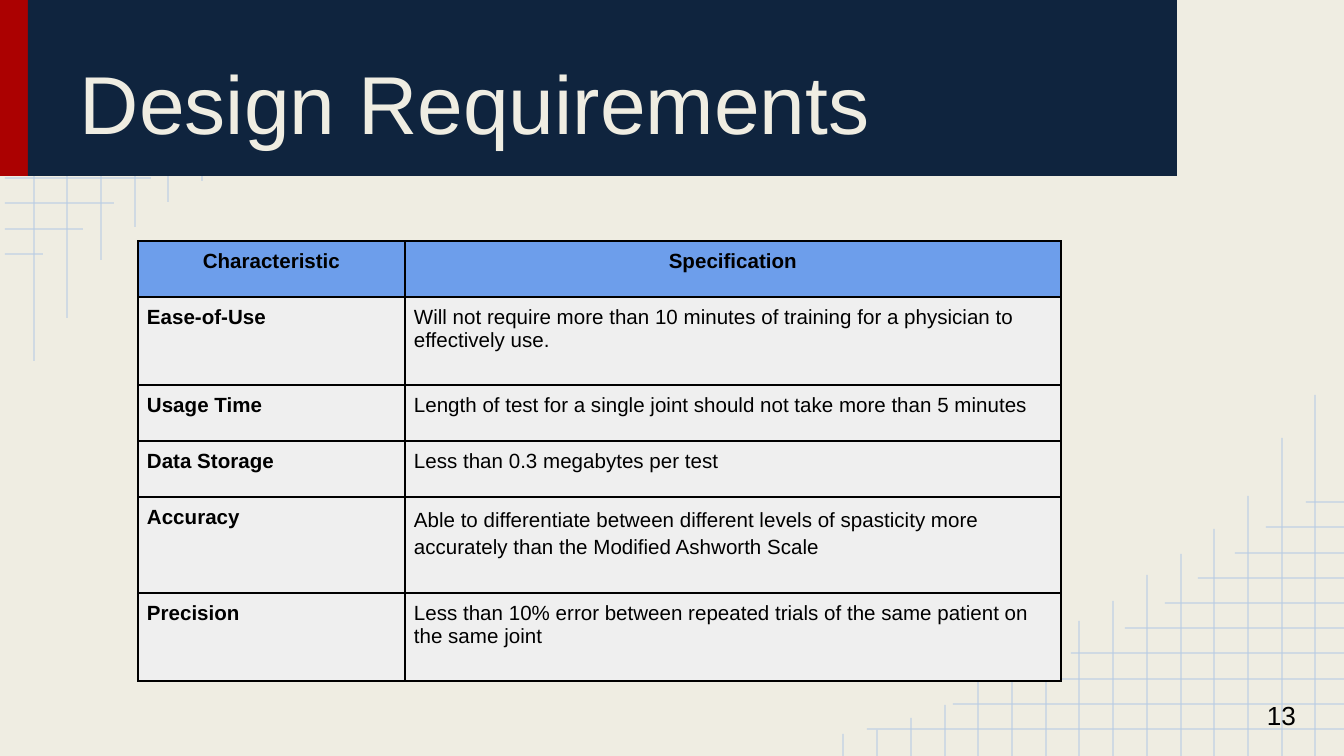
import lxml.etree
import pptx
import pptx.dml.color
import pptx.enum.shapes
import pptx.enum.text
import pptx.oxml.ns
import pptx.util

RGBColor = pptx.dml.color.RGBColor
Align = pptx.enum.text.PP_ALIGN
Anchor = pptx.enum.text.MSO_ANCHOR
qn = pptx.oxml.ns.qn

CREAM = RGBColor(0xEF, 0xED, 0xE2)
NAVY = RGBColor(0x0F, 0x24, 0x3E)
RED = RGBColor(0xAB, 0x01, 0x01)
GRID_BLUE = RGBColor(0xB7, 0xCC, 0xE4)
HEAD_BLUE = RGBColor(0x6D, 0x9E, 0xEB)
CELL_GREY = RGBColor(0xEF, 0xEF, 0xEF)
BLACK = RGBColor(0, 0, 0)

FONT = "Arial"
WIDTH, HEIGHT = 1344, 756
SCALE = 9144000 / WIDTH

GRID_INSET = 5
GRID_ROW_REACH = [482, 396, 324, 278, 224, 184, 151, 114, 83, 43]
GRID_COLUMN_REACH = [361, 318, 260, 227, 202, 181, 155, 135, 113, 97, 75, 51, 38, 26, 22]

COLUMN_WIDTHS = [267, 656]
ROW_HEIGHTS = [56, 88, 56, 56, 96, 88]
REQUIREMENTS = [
    ("Characteristic", "Specification"),
    ("Ease-of-Use", "Will not require more than 10 minutes of training for a physician to effectively use."),
    ("Usage Time", "Length of test for a single joint should not take more than 5 minutes"),
    ("Data Storage", "Less than 0.3 megabytes per test"),
    ("Accuracy", "Able to differentiate between different levels of spasticity more accurately "
                 "than the Modified Ashworth Scale"),
    ("Precision", "Less than 10% error between repeated trials of the same patient on the same joint"),
]


def px(length):
    """Turn px into EMU."""
    return pptx.util.Emu(round(length * SCALE))


def style_paragraph(para, size, color, bold=False, align=Align.LEFT):
    """Set the font and alignment of a paragraph."""
    para.alignment = align
    para.font.name = FONT
    para.font.size = pptx.util.Pt(size)
    para.font.color.rgb = color
    para.font.bold = bold


def add_text(page, box, text, size, color, anchor, align=Align.LEFT):
    """Place one line of text in a box."""
    frame = page.shapes.add_textbox(*map(px, box)).text_frame
    frame.word_wrap = True
    frame.vertical_anchor = anchor
    frame.margin_left = frame.margin_right = frame.margin_top = frame.margin_bottom = px(13)
    frame.text = text
    style_paragraph(frame.paragraphs[0], size, color, align=align)


def add_grid_line(page, start, end):
    """Draw one translucent grid line."""
    line = page.shapes.add_connector(
        pptx.enum.shapes.MSO_CONNECTOR.STRAIGHT, *map(px, start + end))
    line.line.width = pptx.util.Pt(1)
    line.line.color.rgb = GRID_BLUE
    properties = line._element.spPr
    color = properties.find(".//" + qn("a:srgbClr"))
    lxml.etree.SubElement(color, qn("a:alpha"), val="54000")
    lxml.etree.SubElement(properties, qn("a:effectLst"))


def add_corner_grid(page, corner, direction):
    """Draw the fading grid outward from a corner, along direction 1 or -1."""
    left, top = corner

    def place(x, y):
        return left + direction * x, top + direction * y

    for index, reach in enumerate(GRID_ROW_REACH):
        y = round(27 + 25.2 * index)
        add_grid_line(page, place(GRID_INSET, y), place(reach, y))
    for index, reach in enumerate(GRID_COLUMN_REACH, 1):
        x = round(33.7 * index)
        add_grid_line(page, place(x, reach), place(x, 0))


def add_header(page, box):
    """Draw the red and navy band with the title."""
    left, top, width, height = box
    stripe = 28
    for x, band_width, color in ((left, stripe, RED), (left + stripe, width - stripe, NAVY)):
        band = page.shapes.add_shape(
            pptx.enum.shapes.MSO_SHAPE.RECTANGLE, *map(px, (x, top, band_width, height)))
        band.shadow.inherit = False
        band.fill.solid()
        band.fill.fore_color.rgb = color
        band.line.fill.background()
    add_text(page, (left + 67, top + 16, 1075, 149), "Design Requirements", 44, CREAM, Anchor.BOTTOM)


def add_cell_borders(cell):
    """Give a cell a thin black border on every side."""
    properties = cell._tc.get_or_add_tcPr()
    for index, side in enumerate(("lnL", "lnR", "lnT", "lnB")):
        border = lxml.etree.Element(qn("a:" + side), w="12700")
        fill = lxml.etree.SubElement(border, qn("a:solidFill"))
        lxml.etree.SubElement(fill, qn("a:srgbClr"), val=str(BLACK))
        properties.insert(index, border)


def add_requirements_table(page, box):
    """Build the table of characteristics and specifications."""
    table = page.shapes.add_table(
        len(REQUIREMENTS), len(COLUMN_WIDTHS), *map(px, box)).table
    table.horz_banding = False
    for column, width in zip(table.columns, COLUMN_WIDTHS):
        column.width = px(width)
    for row, height in zip(table.rows, ROW_HEIGHTS):
        row.height = px(height)
    for row_index, texts in enumerate(REQUIREMENTS):
        is_head = row_index == 0
        for column_index, text in enumerate(texts):
            cell = table.cell(row_index, column_index)
            cell.margin_left = cell.margin_right = cell.margin_top = cell.margin_bottom = px(9)
            cell.fill.solid()
            cell.fill.fore_color.rgb = HEAD_BLUE if is_head else CELL_GREY
            cell.text = text
            para = cell.text_frame.paragraphs[0]
            style_paragraph(para, 11, BLACK, is_head or column_index == 0,
                            Align.CENTER if is_head else Align.LEFT)
            add_cell_borders(cell)
    table.cell(4, 1).text_frame.paragraphs[0].line_spacing = 1.15


def main():
    """Build the deck and save it."""
    deck = pptx.Presentation()
    deck.slide_width, deck.slide_height = px(WIDTH), px(HEIGHT)
    page = deck.slides.add_slide(deck.slide_layouts[6])
    page.background.fill.solid()
    page.background.fill.fore_color.rgb = CREAM
    add_corner_grid(page, (0, 0), 1)
    add_corner_grid(page, (WIDTH + GRID_INSET, HEIGHT), -1)
    add_header(page, (0, -1, 1177, 177))
    add_requirements_table(page, (138, 241, sum(COLUMN_WIDTHS), sum(ROW_HEIGHTS)))
    add_text(page, (1200, 686, 109, 58), "13", 14, BLACK, Anchor.MIDDLE, Align.RIGHT)
    deck.save("out.pptx")


if __name__ == "__main__":
    main()
